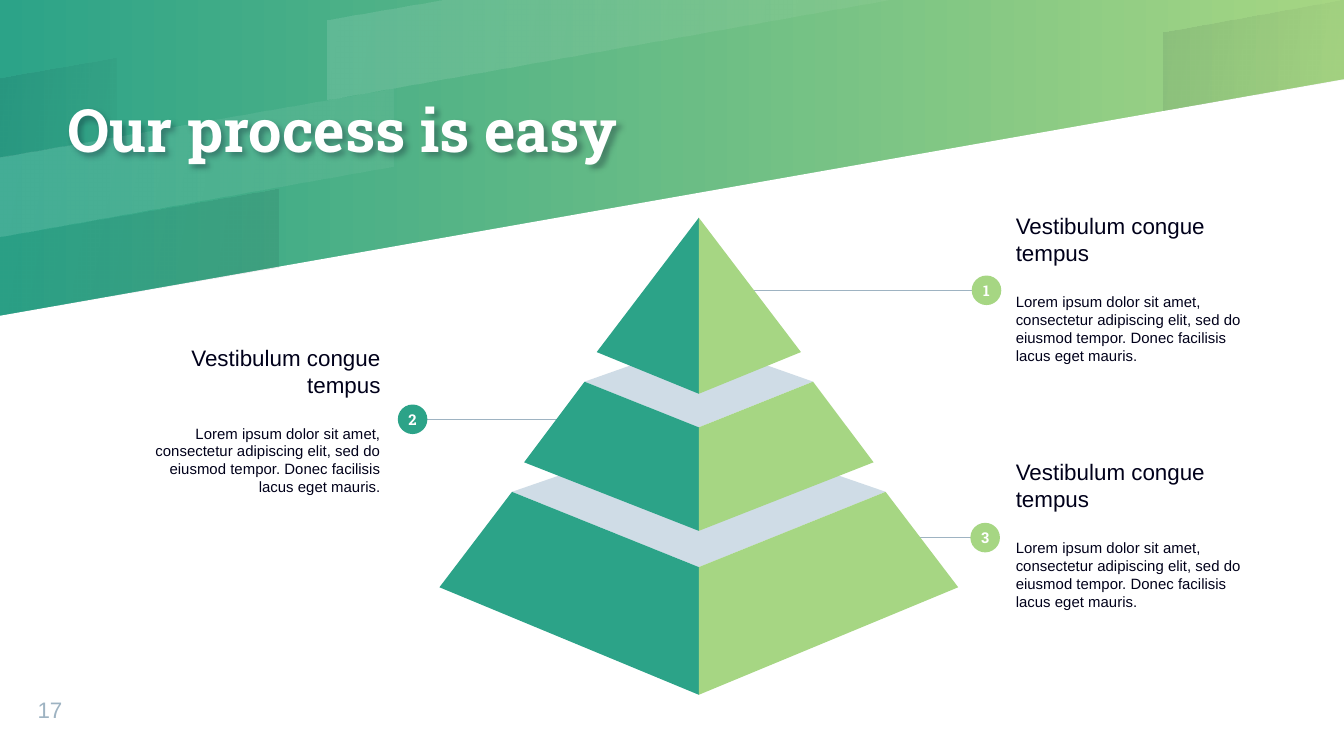
from lxml import etree
from pptx import Presentation
from pptx.dml.color import RGBColor
from pptx.enum.shapes import MSO_CONNECTOR as Connector, MSO_SHAPE as Shape
from pptx.enum.text import MSO_ANCHOR as Anchor, PP_ALIGN as Align
from pptx.oxml import parse_xml
from pptx.oxml.ns import nsdecls, qn
from pptx.util import Pt

PX = 9144
TEAL, LIME, MIST, SLATE = "2CA388", "A6D683", "CFDCE6", "9EB3C2"
WHITE, INK = "FFFFFF", "00001A"
colour = RGBColor.from_string


def write_text(shape, *lines, sizes=(12,), font="Arial", color=INK, bold=False,
               align=Align.LEFT, anchor=Anchor.MIDDLE, inset=0, gap=0, spacing=1.0):
    frame = shape.text_frame
    frame.word_wrap = True
    frame.vertical_anchor = anchor
    frame.margin_left = frame.margin_right = inset * PX
    frame.margin_top = frame.margin_bottom = inset * PX
    frame.text = "\n".join(lines)
    for paragraph, size in zip(frame.paragraphs, sizes):
        paragraph.alignment = align
        paragraph.line_spacing = spacing
        paragraph.space_before = Pt(0)
        paragraph.space_after = Pt(gap)
        style = paragraph.runs[0].font
        style.name, style.size, style.bold = font, Pt(size), bold
        style.color.rgb = colour(color)


def draw_outline(points, fill):
    builder = slide.shapes.build_freeform(*points[0], scale=PX)
    builder.add_line_segments(points[1:], close=True)
    outline = builder.convert_to_shape()
    outline.shadow.inherit = False
    outline.line.fill.background()
    outline.fill.solid()
    outline.fill.fore_color.rgb = colour(fill)
    return outline


prs = Presentation()
prs.slide_width = 1000 * PX
prs.slide_height = prs.slide_width * 9 // 16
slide = prs.slides.add_slide(prs.slide_layouts[5])

backdrop = slide.background.fill
backdrop.gradient()
backdrop.gradient_angle = 0
for stop, tint in zip(backdrop.gradient_stops, (TEAL, LIME)):
    stop.color.rgb = colour(tint)

draw_outline([(0, 563), (1000, 563), (1000, 59), (0, 235)], WHITE)

bands = [
    ([(332, 0), (244, 15), (244, 74), (665, 0)], WHITE, (12, 5)),
    ([(0, 58), (0, 117), (87, 102), (87, 43)], INK, (8, 2)),
    ([(0, 176), (0, 235), (207, 199), (207, 140)], INK, (2, 8)),
    ([(1000, 0), (999, 0), (866, 24), (866, 82), (1000, 59)], INK, (8, 2)),
    ([(0, 117), (0, 176), (293, 124), (293, 66)], WHITE, (12, 5)),
]
for points, tint, opacities in bands:
    band = draw_outline(points, tint)
    band.fill.gradient()
    band.fill.gradient_angle = 350
    for stop in band.fill.gradient_stops:
        stop.color.rgb = colour(tint)
    for stop_color, opacity in zip(band._element.iter(qn("a:srgbClr")), opacities):
        etree.SubElement(stop_color, qn("a:alpha")).set("val", str(opacity * 1000))

title = slide.shapes.title
title.left, title.top, title.width, title.height = 50 * PX, 0, 600 * PX, 198 * PX
write_text(title, "Our process is easy", sizes=(32,), font="Roboto Slab",
           color=WHITE, bold=True, spacing=0.9)
title._element.spPr.append(parse_xml(
    f'<a:effectLst {nsdecls("a")}><a:outerShdw blurRad="38100" dist="28575" dir="2700000">'
    '<a:srgbClr val="00001A"><a:alpha val="30000"/></a:srgbClr></a:outerShdw></a:effectLst>'))
slide.shapes._spTree.append(title._element)

page_number = slide.shapes.add_textbox(28 * PX, 511 * PX, 53 * PX, 27 * PX)
write_text(page_number, "17", color=SLATE, anchor=Anchor.BOTTOM)

HEADING = "Vestibulum congue tempus"
DETAIL = ("Lorem ipsum dolor sit amet, consectetur adipiscing elit, sed do "
          "eiusmod tempor. Donec facilisis lacus eget mauris.")
BADGE = 22
callouts = [
    ("1", 746, 139, Align.LEFT, 723, 205, 556, LIME),
    ("2", 89, 237, Align.RIGHT, 296, 301, 417, TEAL),
    ("3", 746, 322, Align.LEFT, 722, 389, 680, LIME),
]
for number, text_x, text_y, align, badge_x, badge_y, pyramid_x, tint in callouts:
    middle = badge_y + BADGE // 2
    leader = slide.shapes.add_connector(
        Connector.STRAIGHT, pyramid_x * PX, middle * PX,
        (badge_x + BADGE // 2) * PX, middle * PX)
    leader.line.color.rgb = colour(SLATE)
    leader.line.width = Pt(0.75)
    etree.SubElement(leader._element.spPr, qn("a:effectLst"))

    caption = slide.shapes.add_textbox(text_x * PX, text_y * PX, 204 * PX, 151 * PX)
    write_text(caption, HEADING, DETAIL, sizes=(12, 8), align=align, inset=10, gap=14)

    badge = slide.shapes.add_shape(
        Shape.OVAL, badge_x * PX, badge_y * PX, BADGE * PX, BADGE * PX)
    badge.shadow.inherit = False
    badge.fill.solid()
    badge.fill.fore_color.rgb = colour(tint)
    badge.line.fill.background()
    write_text(badge, number, sizes=(8,), font="Roboto Slab", color=WHITE,
               bold=True, align=Align.CENTER)

AXIS = 520
tiers = [
    (139, 366, 318, 422, 193, 437, 517),
    (85, 284, 254, 318, 130, 344, 395),
    (0, 162, 162, 162, 76, 262, 293),
]
for top_half, top_y, back_y, front_y, foot_half, foot_y, bottom_y in tiers:
    if top_half:
        draw_outline([(AXIS - top_half, top_y), (AXIS, front_y),
                      (AXIS + top_half, top_y), (AXIS, back_y)], MIST)
    for side, tint in ((-1, TEAL), (1, LIME)):
        face = [(AXIS + side * foot_half, foot_y), (AXIS, bottom_y), (AXIS, front_y)]
        if top_half:
            face.append((AXIS + side * top_half, top_y))
        draw_outline(face, tint)

prs.save("out.pptx")
